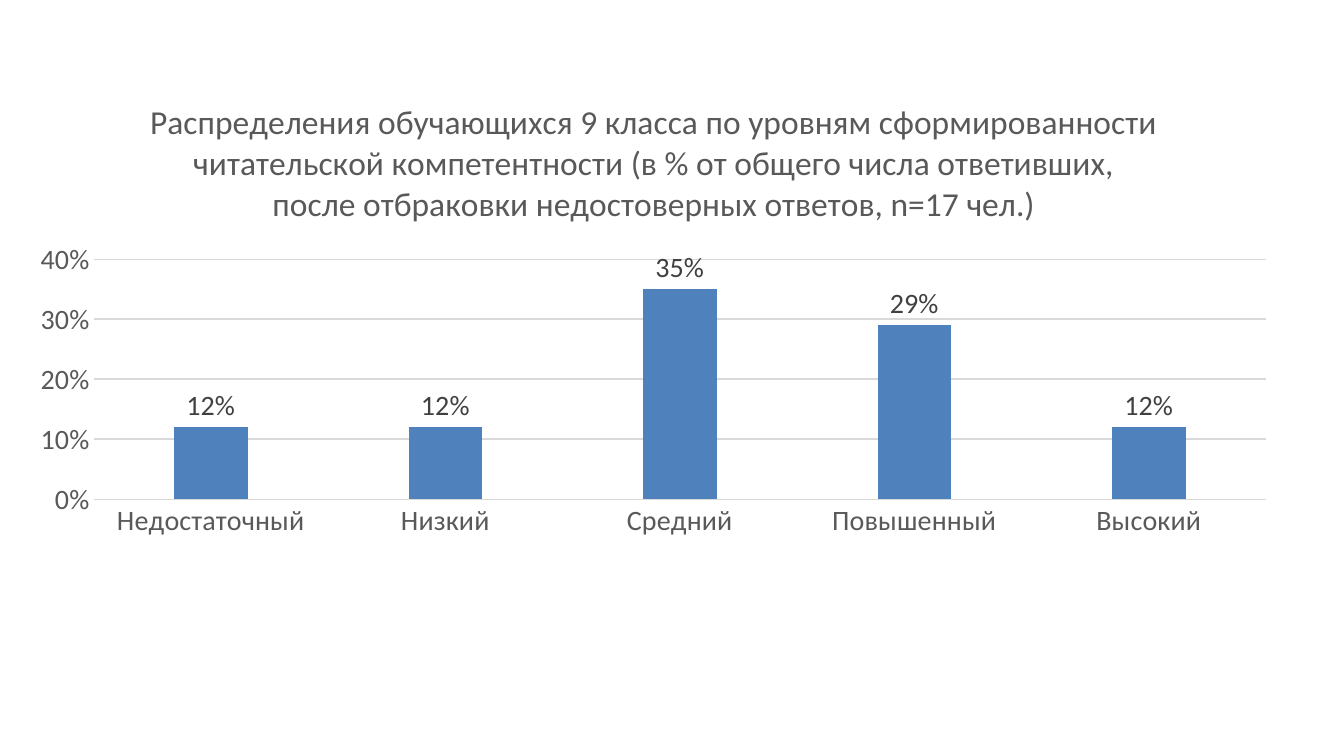
from lxml.etree import SubElement, Element
from pptx import Presentation
from pptx.chart.data import CategoryChartData
from pptx.dml.color import RGBColor
from pptx.enum.chart import XL_CHART_TYPE, XL_LABEL_POSITION, XL_TICK_MARK
from pptx.oxml.ns import qn
from pptx.util import Inches, Pt

BLUE = RGBColor(0x4F, 0x81, 0xBD)
GRAY = RGBColor(0x59, 0x59, 0x59)
DARK = RGBColor(0x40, 0x40, 0x40)
PALE = RGBColor(0xD9, 0xD9, 0xD9)


def style(font, size, color):
    font.name = "Calibri"
    font.size = Pt(size)
    font.bold = False
    font.color.rgb = color


deck = Presentation()
deck.slide_width = Inches(13.33)
deck.slide_height = Inches(7.5)
slide = deck.slides.add_slide(deck.slide_layouts[6])

data = CategoryChartData(number_format="0%")
data.categories = ["Недостаточный", "Низкий", "Средний", "Повышенный", "Высокий"]
data.add_series("Series 1", [0.12, 0.12, 0.35, 0.29, 0.12])
chart = slide.shapes.add_chart(
    XL_CHART_TYPE.COLUMN_CLUSTERED,
    Inches(0.17), Inches(0.83), Inches(12.64), Inches(4.58), data,
).chart
style(chart.font, 20, GRAY)
chart.has_legend = False

chart.has_title = True
title = chart.chart_title.text_frame
title.text = (
    "Распределения обучающихся 9 класса по уровням сформированности\n"
    "читательской компетентности (в % от общего числа ответивших,\n"
    "после отбраковки недостоверных ответов, n=17 чел.)"
)
for row in title.paragraphs:
    style(row.font, 23.9, GRAY)
    for run in row.runs:
        style(run.font, 23.9, GRAY)
chart.chart_title.include_in_layout = False

levels = chart.category_axis
shares = chart.value_axis
for axis in (levels, shares):
    axis.major_tick_mark = XL_TICK_MARK.NONE
    axis.minor_tick_mark = XL_TICK_MARK.NONE
    style(axis.tick_labels.font, 20, GRAY)
shares.minimum_scale = 0
shares.maximum_scale = 0.4
shares.major_unit = 0.1
shares.tick_labels.number_format = "0%"
shares.tick_labels.number_format_is_linked = False
shares.has_major_gridlines = True
shares.format.line.fill.background()
for line in (levels.format.line, shares.major_gridlines.format.line):
    line.color.rgb = PALE
    line.width = Pt(0.75)

plot = chart.plots[0]
plot.gap_width = 219
plot.overlap = -27
plot.vary_by_categories = False
bars = plot.series[0]
bars.format.fill.solid()
bars.format.fill.fore_color.rgb = BLUE
labels = bars.data_labels
labels.show_value = True
labels.number_format = "0%"
labels.number_format_is_linked = False
labels.position = XL_LABEL_POSITION.OUTSIDE_END
style(labels.font, 20, DARK)

area = chart.element.find(".//" + qn("c:plotArea"))
for old in area.findall(qn("c:layout")):
    area.remove(old)
layout = Element(qn("c:layout"))
area.insert(0, layout)
frame = SubElement(layout, qn("c:manualLayout"))
for tag, value in [
    ("layoutTarget", "inner"), ("xMode", "edge"), ("yMode", "edge"),
    ("x", "0.06"), ("y", "0.38"), ("w", "0.92"), ("h", "0.52"),
]:
    SubElement(frame, qn("c:" + tag)).set("val", value)

deck.save("out.pptx")
